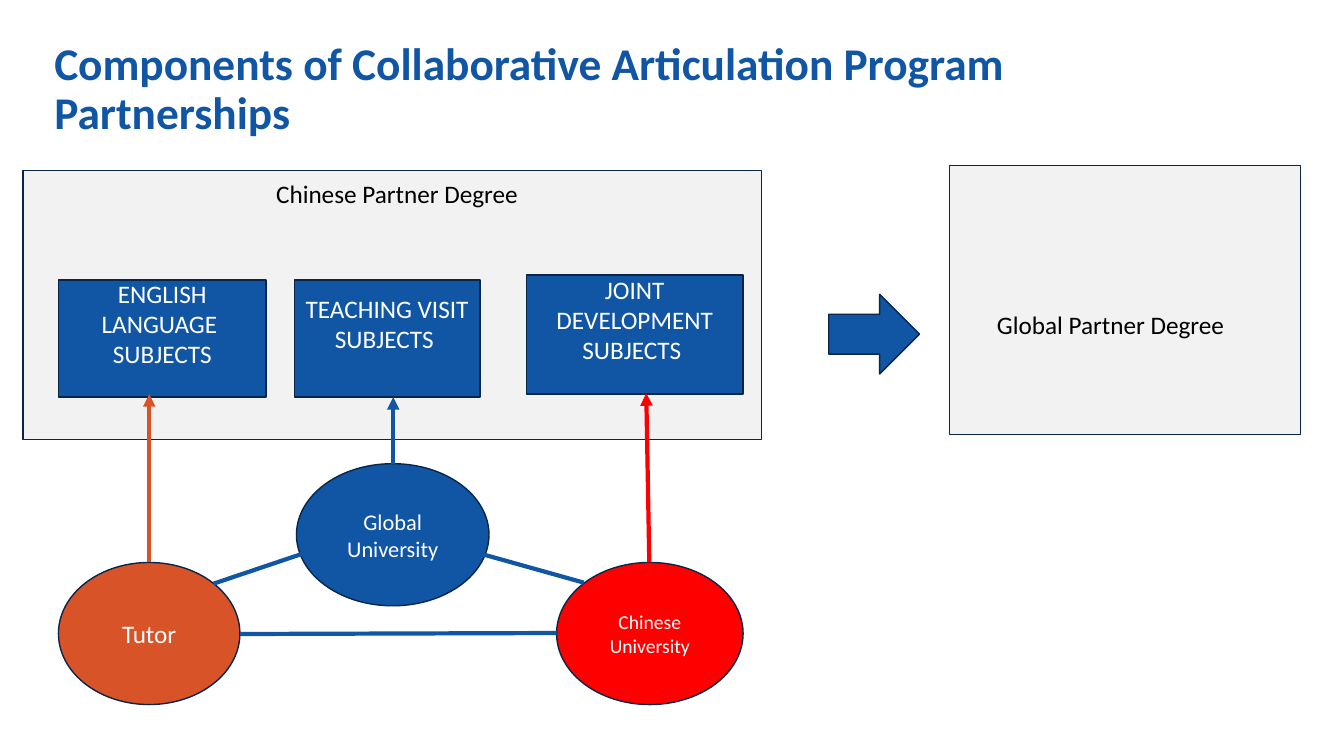
from pptx import Presentation
from pptx.dml.color import RGBColor
from pptx.enum.shapes import MSO_CONNECTOR as CONN, MSO_SHAPE as SHAPE
from pptx.enum.text import MSO_ANCHOR as ANCHOR, PP_ALIGN as ALIGN
from pptx.oxml.ns import qn
from pptx.util import Inches, Pt
from lxml import etree

BLUE, ORANGE, RED = "1056A4", "D85327", "FF0000"
NAVY, GREY, WHITE, BLACK = "072648", "F2F2F2", "FFFFFF", "000000"


def rgb(value):
    return RGBColor.from_string(value)


def write(shape, lines, size, color, align=ALIGN.CENTER, bold=False):
    tf = shape.text_frame
    tf.word_wrap = True
    tf.text = "\n".join(lines)
    for p in tf.paragraphs:
        p.alignment = align
        p.font.name = "Calibri"
        p.font.size = Pt(size)
        p.font.bold = bold
        p.font.color.rgb = rgb(color)
    return tf


prs = Presentation()
prs.slide_width, prs.slide_height = Inches(13.33), Inches(7.5)
s = prs.slides.add_slide(prs.slide_layouts[6])

# Degree panels, subject boxes, arrow and partner ellipses
shapes = [
    (SHAPE.RECTANGLE, 0.23, 1.69, 7.32, 2.67, GREY, [], 18),
    (SHAPE.RECTANGLE, 9.42, 1.64, 3.48, 2.67, GREY, [], 18),
    (SHAPE.RECTANGLE, 0.58, 2.78, 2.06, 1.16, BLUE, ["ENGLISH LANGUAGE ", "SUBJECTS"], 18),
    (SHAPE.RECTANGLE, 2.92, 2.78, 1.84, 1.16, BLUE, ["TEACHING VISIT", "SUBJECTS "], 18),
    (SHAPE.RECTANGLE, 5.22, 2.73, 2.15, 1.18, BLUE, ["JOINT DEVELOPMENT", "SUBJECTS "], 18),
    (SHAPE.RIGHT_ARROW, 8.22, 2.92, 0.9, 0.79, BLUE, [], 18),
    (SHAPE.OVAL, 2.94, 4.6, 1.91, 1.41, BLUE, ["Global University"], 16),
    (SHAPE.OVAL, 5.52, 5.58, 1.85, 1.41, RED, ["Chinese University"], 14),
    (SHAPE.OVAL, 0.58, 5.58, 1.8, 1.41, ORANGE, ["Tutor"], 18),
]
for kind, x, y, w, h, fill, lines, size in shapes:
    sp = s.shapes.add_shape(kind, Inches(x), Inches(y), Inches(w), Inches(h))
    sp.shadow.inherit = False
    sp.fill.solid()
    sp.fill.fore_color.rgb = rgb(fill)
    sp.line.color.rgb = rgb(NAVY)
    sp.line.width = Pt(1)
    if lines:
        tf = write(sp, lines, size, WHITE)
        tf.vertical_anchor = ANCHOR.MIDDLE
        if kind == SHAPE.RECTANGLE:  # subject text sits above the middle
            tf.margin_top, tf.margin_bottom = 0, Inches(0.3)

# Title
title = s.shapes.add_textbox(Inches(0.44), Inches(0.51), Inches(12), Inches(0.77))
tf = write(title, ["Components of Collaborative Articulation Program Partnerships"],
           32.4, BLUE, ALIGN.LEFT, True)
tf.vertical_anchor = ANCHOR.MIDDLE
tf.paragraphs[0].line_spacing = 0.9

# Panel labels
for x, y, w, label in [(2.64, 1.72, 3.28, "Chinese Partner Degree"),
                       (9.79, 3.02, 3.14, "Global Partner Degree")]:
    box = s.shapes.add_textbox(Inches(x), Inches(y), Inches(w), Inches(0.4))
    write(box, [label], 18, BLACK, ALIGN.LEFT)

# Arrows to the subjects, then links between the partners
links = [
    (1.48, 5.58, 1.48, 3.91, ORANGE, True),
    (3.9, 4.6, 3.9, 3.94, BLUE, True),
    (6.44, 5.58, 6.41, 3.9, RED, True),
    (2.12, 5.79, 3.04, 5.48, BLUE, False),
    (2.38, 6.29, 5.52, 6.28, BLUE, False),
    (4.72, 5.48, 5.79, 5.78, BLUE, False),
]
for x1, y1, x2, y2, color, arrow in links:
    line = s.shapes.add_connector(CONN.STRAIGHT, Inches(x1), Inches(y1), Inches(x2), Inches(y2))
    line.line.color.rgb = rgb(color)
    line.line.width = Pt(3)
    if arrow:
        etree.SubElement(line.line._get_or_add_ln(), qn("a:tailEnd"), type="triangle")
    etree.SubElement(line._element.spPr, qn("a:effectLst"))

prs.save("out.pptx")
